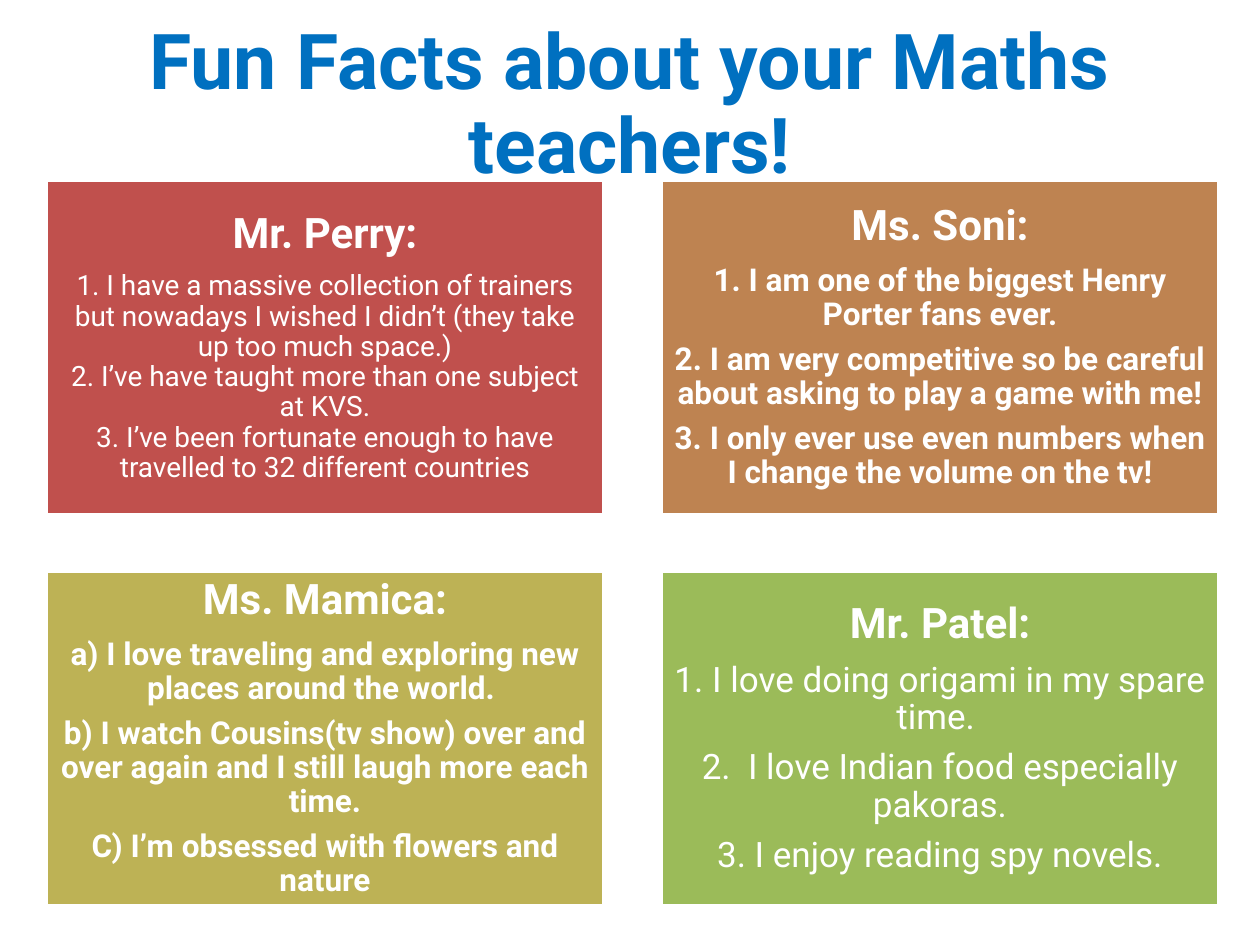
from copy import deepcopy
from dataclasses import dataclass

from pptx import Presentation
from pptx.dml.color import RGBColor
from pptx.enum.shapes import MSO_SHAPE
from pptx.enum.text import MSO_ANCHOR, PP_ALIGN
from pptx.oxml.ns import qn
from pptx.util import Emu, Pt

PX_PER_INCH = 126


@dataclass(frozen=True)
class Theme:
    font: str = "Roboto"
    title_color: str = "0070C0"
    card_text: str = "FFFFFF"
    card_line: str = "FFFFFF"
    red: str = "C0504D"
    brown: str = "BE8351"
    olive: str = "BDB255"
    green: str = "9BBB59"
    title_size: int = 44
    name_size: int = 24
    line_width: int = 2
    line_spacing: float = 0.9
    space_after: float = 0.35  # share of the type size


@dataclass(frozen=True)
class Card:
    name: str
    facts: tuple[str, ...]
    fill: str
    size: int
    bold: bool


THEME = Theme()

# Teachers, in reading order
CARDS = (
    Card("Mr. Perry:", (
        "1. I have a massive collection of trainers but nowadays I wished "
        "I didn’t (they take up too much space.)\n"
        "2. I’ve have taught more than one subject at KVS.\n"
        "3. I’ve been fortunate enough to have travelled to 32 different countries",
    ), THEME.red, 16, False),
    Card("Ms. Soni:", (
        "1. I am one of the biggest Henry Porter fans ever.",
        "2. I am very competitive so be careful about asking to play a game with me!",
        "3. I only ever use even numbers when I change the volume on the tv!",
    ), THEME.brown, 18, True),
    Card("Ms. Mamica:", (
        "a) I love traveling and exploring new places around the world. ",
        "b) I watch Cousins(tv show) over and over again and I still laugh more each time.",
        "C) I’m obsessed with flowers and nature",
    ), THEME.olive, 18, True),
    Card("Mr. Patel:", (
        "1. I love doing origami in my spare time. ",
        "2.  I love Indian food especially pakoras.",
        "3. I enjoy reading spy novels.",
    ), THEME.green, 20, False),
)

# Card grid, in px
COLUMNS = 2
GRID_LEFT, GRID_TOP = 46, 180
CARD_WIDTH, CARD_HEIGHT = 558, 335
COLUMN_STEP, ROW_STEP = 615, 391


def px(length: int) -> Emu:
    return Emu(round(length * 914400 / PX_PER_INCH))


def prepare_frame(frame, inset_x: int, inset_y: int) -> None:
    frame.word_wrap = True
    frame.vertical_anchor = MSO_ANCHOR.MIDDLE
    frame.margin_left = frame.margin_right = px(inset_x)
    frame.margin_top = frame.margin_bottom = px(inset_y)


def style_paragraph(para, size: int, bold: bool, color: str, space_after: float) -> None:
    para.alignment = PP_ALIGN.CENTER
    para.line_spacing = THEME.line_spacing
    para.space_after = Pt(size * space_after)
    for span in para.runs:
        span.font.name = THEME.font
        span.font.size = Pt(size)
        span.font.bold = bold
        span.font.color.rgb = RGBColor.from_string(color)
    # Line breaks take the type size of the text around them
    for line_break in para._p.findall(qn("a:br")):
        line_break.append(deepcopy(para.runs[0]._r.rPr))


def draw_card(page, card: Card, left: int, top: int) -> None:
    box = page.shapes.add_shape(
        MSO_SHAPE.RECTANGLE, px(left), px(top), px(CARD_WIDTH), px(CARD_HEIGHT))
    box.shadow.inherit = False
    box.fill.solid()
    box.fill.fore_color.rgb = RGBColor.from_string(card.fill)
    box.line.color.rgb = RGBColor.from_string(THEME.card_line)
    box.line.width = Pt(THEME.line_width)

    frame = box.text_frame
    prepare_frame(frame, 12, 12)
    frame.text = card.name
    style_paragraph(frame.paragraphs[0], THEME.name_size, True,
                    THEME.card_text, THEME.space_after)
    for fact in card.facts:
        para = frame.add_paragraph()
        para.text = fact
        style_paragraph(para, card.size, card.bold, THEME.card_text, THEME.space_after)


def draw_title(page, text: str) -> None:
    box = page.shapes.add_textbox(px(87), px(15), px(1086), px(183))
    prepare_frame(box.text_frame, 12, 6)
    box.text_frame.text = text
    style_paragraph(box.text_frame.paragraphs[0], THEME.title_size, True,
                    THEME.title_color, 0)


def main() -> None:
    deck = Presentation()
    deck.slide_width, deck.slide_height = px(1260), px(945)
    page = deck.slides.add_slide(deck.slide_layouts[6])

    for index, card in enumerate(CARDS):
        row, column = divmod(index, COLUMNS)
        draw_card(page, card, GRID_LEFT + column * COLUMN_STEP, GRID_TOP + row * ROW_STEP)
    draw_title(page, "Fun Facts about your Maths teachers!")

    deck.save("out.pptx")


if __name__ == "__main__":
    main()
